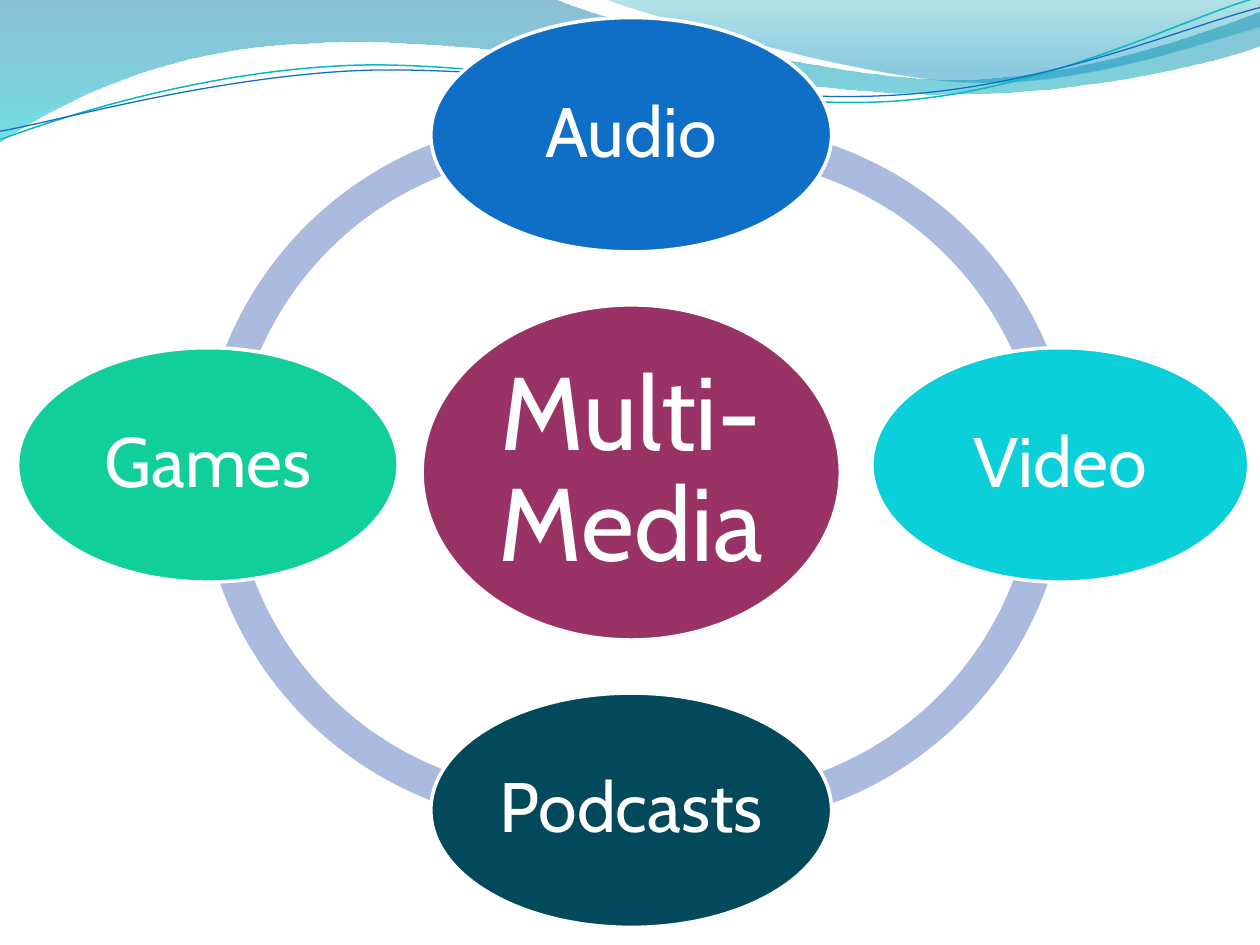
"""Build the multimedia slide: a hub, four media ovals on a ring, and waves on top."""
from lxml import etree
from pptx import Presentation
from pptx import util as u
from pptx.dml.color import RGBColor as Rgb
from pptx.enum import shapes as kinds, text as txt
from pptx.oxml import ns


class Theme:
    font = "Cabin"
    white = "FFFFFF"
    ring = "ABBBDF"
    hub, audio, video, podcast, games = "993366", "0F6FC6", "0BD0D9", "03495C", "10CF9B"
    deep = [(0, "0074A1", 45), (1, "00C6CF", 55)]
    pale = [(0, "00A1A9", 30), (0.8, "008BBF", 45)]
    teal, blue = "0AB8BF", "0F6FC6"
    large, small = 59, 40


def trace(start, steps, closed):
    """Draw lines (2 numbers) and cubic curves (6 numbers) from start."""
    dots = [(u.Pt(x), u.Pt(y)) for step in steps for x, y in zip(step[::2], step[1::2])]
    pen = slide.shapes.build_freeform(u.Pt(start[0]), u.Pt(start[1]))
    pen.add_line_segments(dots, close=closed)
    shape = pen.convert_to_shape()
    shape.shadow.inherit = False
    nodes = iter(list(shape._element.spPr.iter(ns.qn("a:lnTo"))))
    for step in steps:
        node = next(nodes)
        if len(step) == 6:
            curve = etree.Element(ns.qn("a:cubicBezTo"))
            node.addprevious(curve)
            for part in (node, next(nodes), next(nodes)):
                curve.append(part[0])
                part.getparent().remove(part)
    return shape


def place(kind, left, top, width, height, color):
    shape = slide.shapes.add_shape(kind, u.Pt(left), u.Pt(top), u.Pt(width), u.Pt(height))
    shape.shadow.inherit = False
    shape.fill.solid()
    shape.fill.fore_color.rgb = Rgb.from_string(color)
    return shape


deck = Presentation()
deck.slide_width, deck.slide_height = u.Pt(720), u.Pt(540)
slide = deck.slides.add_slide(deck.slide_layouts[6])

waves = [
    (Theme.deep, (0, 0), [
        (316.8, -0.7),
        (342.7, 12.2, 478.1, 45.4, 545.8, 45.4),
        (614.2, 45.4, 689.8, 18.7, 720, 6.5),
        (720.7, 25.9),
        (707.8, 31.7, 626.4, 54.7, 537.1, 54),
        (447.8, 54, 275, 20.2, 185, 24.5),
        (92.9, 25.9, 33.1, 59.8, -0.7, 81.4),
        (0, 0)]),
    (Theme.pale, (344.9, -0.7), [
        (366.5, 7.9, 491, 44.6, 553.7, 46.8),
        (616.3, 49.7, 691.9, 23, 720, 15.1),
        (720, 0),
        (344.9, -0.7)]),
]
for stops, start, steps in waves:
    wave = trace(start, steps, True)
    wave.line.fill.background()
    wave.fill.gradient()
    wave.fill.gradient_angle = 270
    for stop, (offset, color, _) in zip(wave.fill.gradient_stops, stops):
        stop.position = offset
        stop.color.rgb = Rgb.from_string(color)
    for node, (_, _, alpha) in zip(wave._element.spPr.iter(ns.qn("a:srgbClr")), stops):
        etree.SubElement(node, ns.qn("a:alpha"), val=str(alpha * 1000))

threads = [
    (Theme.teal, 0.85, (-1.4, 62.9), [
        (33.8, 51.7, 114.1, 29.4, 199.8, 29.9),
        (284.9, 30.3, 425.8, 67.3, 512.4, 64.9),
        (599, 62.4, 676.5, 25.7, 720.2, 15.5)]),
    (Theme.blue, 0.75, (-1.1, 58), [
        (32.9, 53.8, 118.3, 33.2, 204.1, 33),
        (290.6, 33.4, 428.9, 63.8, 515.5, 61.4),
        (601.3, 59.6, 678.5, 30.1, 721.4, 21.3)]),
]
for color, weight, start, steps in threads:
    thread = trace(start, steps, False)
    thread.rotation = 357.3
    thread.fill.background()
    thread.line.color.rgb = Rgb.from_string(color)
    thread.line.width = u.Pt(weight)

side = 415.4
arcs = [
    (113.8, 68.4, 109.82, 168.66),
    (113.8, 56.2, 47.39, 107.7),
    (195.1, 56.9, 0.18, 61.2),
    (199.4, 71.3, 154.76, 214.3),
]
for left, top, begin, end in arcs:
    arc = place(kinds.MSO_SHAPE.BLOCK_ARC, left, top, side, side, Theme.ring)
    arc.line.fill.background()
    for i, value in enumerate((begin, end, 0.046)):
        arc.adjustments[i] = value

mid, level, tall = 360.7, 265.7, 133.9
ovals = [
    ("Multi-Media", mid, 270, 239, 191.5, Theme.hub, Theme.large, 6),
    ("Audio", mid, 77, 229, tall, Theme.audio, Theme.small, 4),
    ("Video", 605.9, level, 215.3, tall, Theme.video, Theme.small, 4),
    ("Podcasts", mid, 463, 229, tall, Theme.podcast, Theme.small, 4),
    ("Games", 118.8, level, 217.4, tall, Theme.games, Theme.small, 4),
]
for label, x, y, width, height, color, size, inset in ovals:
    oval = place(kinds.MSO_SHAPE.OVAL, x - width / 2, y - height / 2, width, height, color)
    oval.line.color.rgb = Rgb.from_string(Theme.white)
    oval.line.width = u.Pt(2)
    frame = oval.text_frame
    frame.word_wrap = True
    frame.vertical_anchor = txt.MSO_ANCHOR.MIDDLE
    frame.margin_left = frame.margin_right = u.Pt(inset)
    frame.margin_top = frame.margin_bottom = u.Pt(inset)
    para = frame.paragraphs[0]
    para.text = label
    para.alignment = txt.PP_ALIGN.CENTER
    para.line_spacing = 0.9
    para.font.name = Theme.font
    para.font.size = u.Pt(size)
    para.font.color.rgb = Rgb.from_string(Theme.white)

deck.save("out.pptx")
